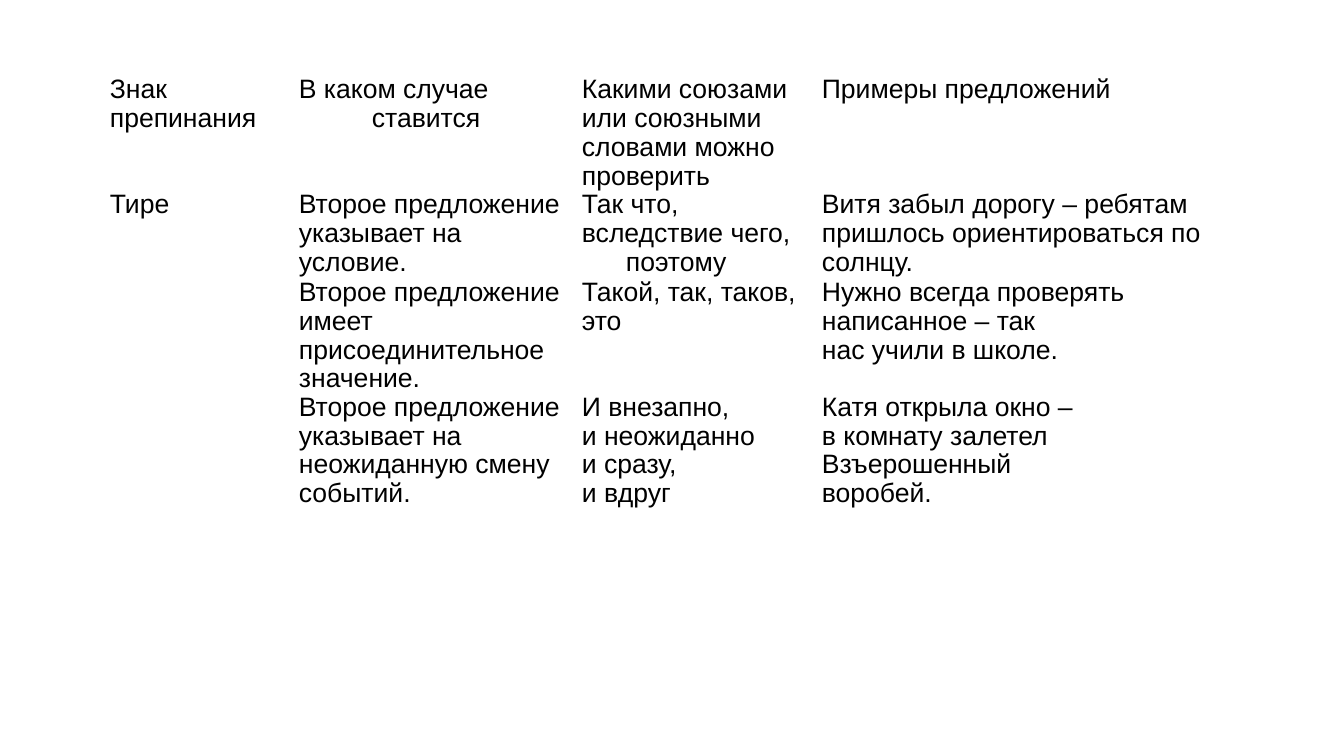
from pptx import Presentation
from pptx.dml.color import RGBColor as RGB
from pptx.util import Emu, Pt

SCALE = 914400 / 100.8
COLORS = {"text": "000000", "page": "FFFFFF"}
FONT = {"name": "Arial", "size": Pt(19), "bold": False}
INSETS = {"margin_left": 7, "margin_right": 7, "margin_top": 0, "margin_bottom": 0}
NO_STYLE = "{2D5ABB26-0587-4C30-8999-92F81FD0307C}"
COLUMNS = [189, 283, 240, 410]
ROW_HEIGHT = 88
INDENTS = {"ставится": 73, "поэтому": 44}
ROWS = [
    [
        ["Знак", "препинания"],
        ["В каком случае", "ставится"],
        ["Какими союзами", "или союзными словами можно проверить"],
        ["Примеры предложений"],
    ],
    [
        ["Тире"],
        ["Второе предложение указывает на условие."],
        ["Так что, вследствие чего,", "поэтому"],
        ["Витя забыл дорогу – ребятам пришлось ориентироваться по солнцу."],
    ],
    [
        [],
        ["Второе предложение имеет присоединительное значение."],
        ["Такой, так, таков, это"],
        ["Нужно всегда проверять написанное – так", "нас учили в школе."],
    ],
    [
        [],
        ["Второе предложение указывает на неожиданную смену событий."],
        ["И внезапно,", "и неожиданно", "и сразу,", "и вдруг"],
        ["Катя открыла окно –", "в комнату залетел", "Взъерошенный", "воробей."],
    ],
]


def px(n):
    return Emu(round(n * SCALE))


def write_paragraph(p, text):
    p.line_spacing = 0.97
    if text in INDENTS:
        p._p.get_or_add_pPr().set("marL", str(px(INDENTS[text])))
    r = p.add_run()
    r.text = text
    for name, value in FONT.items():
        setattr(r.font, name, value)
    r.font.color.rgb = RGB.from_string(COLORS["text"])


def fill_cell(cell, lines):
    cell.fill.solid()
    cell.fill.fore_color.rgb = RGB.from_string(COLORS["page"])
    for name, value in INSETS.items():
        setattr(cell, name, px(value))
    tf = cell.text_frame
    for i, text in enumerate(lines):
        write_paragraph(tf.add_paragraph() if i else tf.paragraphs[0], text)


def add_rules_table(s, left, top):
    frame = s.shapes.add_table(
        len(ROWS), len(COLUMNS), px(left), px(top),
        px(sum(COLUMNS)), px(ROW_HEIGHT * len(ROWS)))
    table = frame.table
    table.first_row = table.horz_banding = False
    table._tbl.tblPr[0].text = NO_STYLE
    for column, width in zip(table.columns, COLUMNS):
        column.width = px(width)
    for row, contents in zip(table.rows, ROWS):
        row.height = px(ROW_HEIGHT)
        for cell, lines in zip(row.cells, contents):
            fill_cell(cell, lines)
    table.cell(1, 0).merge(table.cell(len(ROWS) - 1, 0))


def main():
    prs = Presentation()
    prs.slide_width, prs.slide_height = px(1344), px(756)
    s = prs.slides.add_slide(prs.slide_layouts[6])
    add_rules_table(s, 103, 76)
    prs.save("out.pptx")


if __name__ == "__main__":
    main()
